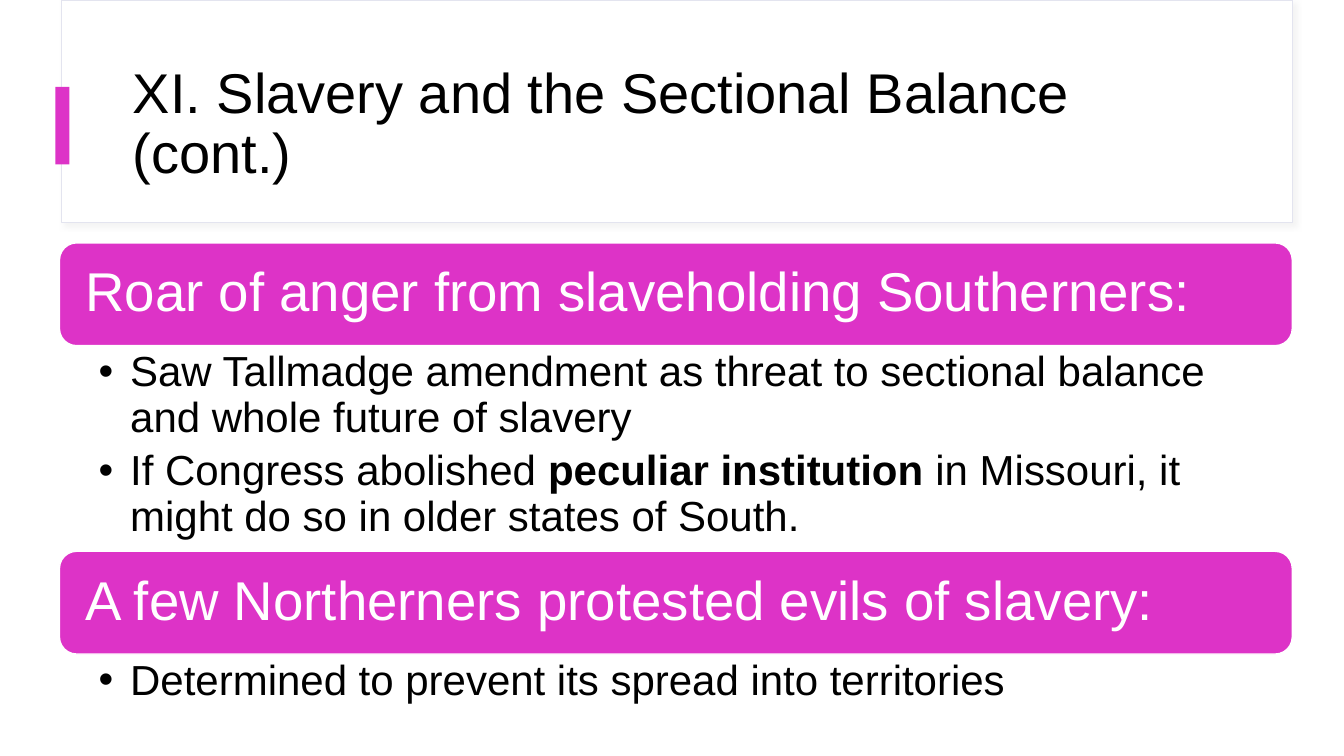
from lxml import etree
from pptx import Presentation, util as u
from pptx.dml.color import RGBColor
from pptx.enum import shapes, text
from pptx.oxml.ns import qn


def hue(code):
    return RGBColor.from_string(code)


def write(shape, paras, size=30, color="000000", pad=(7.2, 3.6, 7.2, 3.6),
          anchor=text.MSO_ANCHOR.TOP, after=0, hang=0):
    """Fill a shape with paragraphs; every second run of one is bold."""
    frame = shape.text_frame
    frame.word_wrap = True
    frame.auto_size = text.MSO_AUTO_SIZE.NONE
    frame.vertical_anchor = anchor
    (frame.margin_left, frame.margin_top,
     frame.margin_right, frame.margin_bottom) = map(u.Pt, pad)
    for i, runs in enumerate(paras):
        para = frame.add_paragraph() if i else frame.paragraphs[0]
        para.alignment = text.PP_ALIGN.LEFT
        para.line_spacing = 0.9
        para.space_before = u.Pt(0)
        para.space_after = u.Pt(after)
        for j, words in enumerate(runs):
            run = para.add_run()
            run.text = words
            run.font.name = "Arial"
            run.font.size = u.Pt(size)
            run.font.bold = j % 2 == 1
            run.font.color.rgb = hue(color)
        if hang:
            props = para._p.get_or_add_pPr()
            props.set("marL", str(u.Pt(hang)))
            props.set("indent", str(-u.Pt(hang)))
            etree.SubElement(props, qn("a:buFont"), typeface="Arial")
            etree.SubElement(props, qn("a:buChar"), char="•")


class Page:
    """Holds the style and the current slide."""
    pink, white, edge = "DD33C7", "FFFFFF", "E3E4EF"
    left, width = 42.5, 880.6

    def __init__(self, deck):
        self.slide = deck.slides.add_slide(deck.slide_layouts[5])

    def box(self, place, fill, line=None, weight=1, kind="RECTANGLE"):
        form = self.slide.shapes.add_shape(
            shapes.MSO_SHAPE[kind], *map(u.Pt, place))
        form.shadow.inherit = False
        form.fill.solid()
        form.fill.fore_color.rgb = hue(fill)
        if line:
            form.line.color.rgb = hue(line)
            form.line.width = u.Pt(weight)
        else:
            form.line.fill.background()
        return form

    def shade(self, form):
        effects = form._element.spPr.find(qn("a:effectLst"))
        cast = etree.SubElement(effects, qn("a:outerShdw"), blurRad=str(u.Pt(4)),
                                dist=str(u.Pt(3)), dir="2700000", algn="tl")
        tint = etree.SubElement(cast, qn("a:srgbClr"), val="D9D9D9")
        etree.SubElement(tint, qn("a:alpha"), val="30000")

    def title(self, words):
        self.shade(self.box((44, 0, 879, 159), self.white, self.edge, 0.75))
        self.box((39.6, 62, 10, 55.4), self.pink)
        head = self.slide.shapes.title
        head.left, head.top, head.width, head.height = map(
            u.Pt, (87.8, 43.2, 800.6, 93))
        tree = head._element.getparent()
        tree.append(head._element)
        write(head, [[words]], size=40, anchor=text.MSO_ANCHOR.MIDDLE)

    def banner(self, top, high, words):
        form = self.box((self.left, top, self.width, high), self.pink,
                        self.white, kind="ROUNDED_RECTANGLE")
        write(form, [[words]], size=39, color=self.white,
              pad=(15, 15, 15, 15), anchor=text.MSO_ANCHOR.MIDDLE)

    def points(self, top, high, paras):
        area = self.slide.shapes.add_textbox(
            *map(u.Pt, (self.left, top, self.width, high)))
        write(area, paras, pad=(28, 3.6, 21.6, 3.6), after=6, hang=22.5)


def main():
    deck = Presentation()
    deck.slide_width, deck.slide_height = u.Pt(960), u.Pt(540)
    page = Page(deck)
    page.title("XI. Slavery and the Sectional Balance (cont.)")
    groups = [
        ("Roar of anger from slaveholding Southerners:", 146.9, [
            ["Saw Tallmadge amendment as threat to sectional balance "
             "and whole future of slavery"],
            ["If Congress abolished ", "peculiar institution",
             " in Missouri, it might do so in older states of South."]]),
        ("A few Northerners protested evils of slavery:", 51, [
            ["Determined to prevent its spread into territories"]]),
    ]
    top, band = 173.5, 73.4
    for name, high, paras in groups:
        page.banner(top, band, name)
        page.points(top + band, high, paras)
        top += band + high
    deck.save("out.pptx")


if __name__ == "__main__":
    main()
